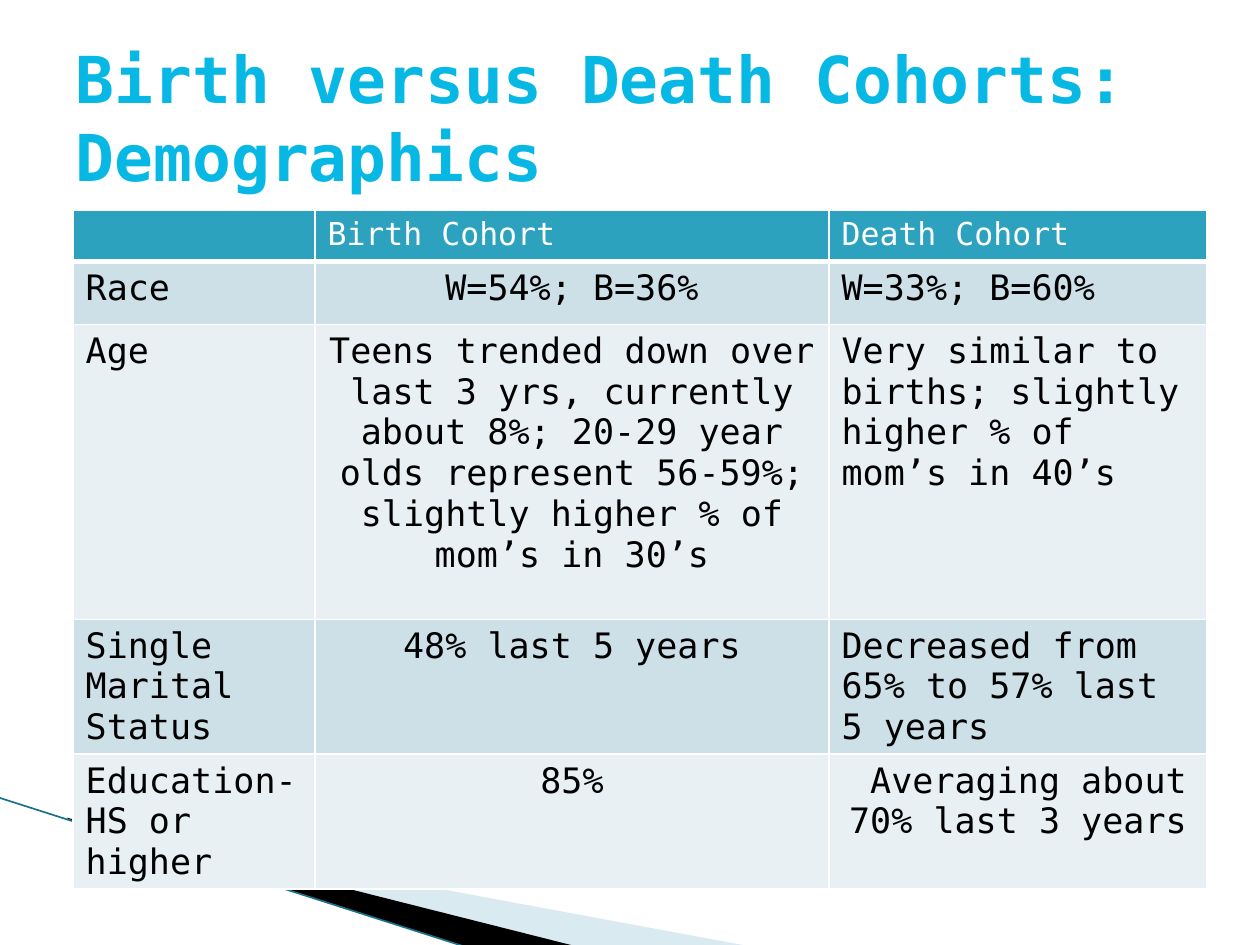
from typing import NamedTuple

import lxml.etree
import pptx
import pptx.util
from pptx.dml.color import RGBColor
from pptx.enum.shapes import MSO_CONNECTOR
from pptx.enum.text import MSO_ANCHOR, PP_ALIGN
from pptx.oxml import parse_xml
from pptx.oxml.ns import nsdecls, qn
from pptx.util import Inches

FONT = "DejaVu Sans Mono"
COLORS = {
    "title": "08B8E4",
    "header": "2DA2BF",
    "odd_row": "CDE0E8",
    "even_row": "E8F0F4",
    "white": "FFFFFF",
    "black": "000000",
    "pale_wedge": "A0CBDC",
    "edge": "1A7288",
}


class Wedge(NamedTuple):
    points: list[tuple[float, float]]
    color: str
    opacity: int


class Row(NamedTuple):
    height: float
    label: str
    birth: str
    death: str
    death_align: PP_ALIGN = PP_ALIGN.LEFT


WEDGES = [
    Wedge([(0.55, 6.51), (5.95, 7.51), (4.56, 7.51), (0.55, 6.5)], "pale_wedge", 40),
    Wedge([(0.53, 6.49), (4.57, 7.51), (3.72, 7.52), (0.54, 6.5)], "black", 100),
]
COLUMN_WIDTHS = [1.92, 4.08, 3]
ROWS = [
    Row(0.39, "", "Birth Cohort", "Death Cohort"),
    Row(0.5, "Race", "W=54%; B=36%", "W=33%; B=60%"),
    Row(2.34, "Age",
        "Teens trended down over last 3 yrs, currently about 8%; 20-29 year olds "
        "represent 56-59%; slightly higher % of mom’s in 30’s",
        "Very similar to births; slightly higher % of mom’s in 40’s"),
    Row(0.86, "Single Marital Status", "48% last 5 years",
        "Decreased from 65% to 57% last 5 years"),
    Row(0.86, "Education-HS or higher", "85%",
        " Averaging about 70% last 3 years", PP_ALIGN.CENTER),
]


def rgb(name: str) -> RGBColor:
    return RGBColor.from_string(COLORS[name])


def format_text(frame, size: float, color: str, bold: bool = False) -> None:
    for paragraph in frame.paragraphs:
        for run in paragraph.runs:
            run.font.name = FONT
            run.font.size = pptx.util.Pt(size)
            run.font.bold = bold
            run.font.color.rgb = rgb(color)


def draw_wedge(slide, wedge: Wedge) -> None:
    start, *rest = [(Inches(x), Inches(y)) for x, y in wedge.points]
    builder = slide.shapes.build_freeform(*start)
    builder.add_line_segments(rest, close=True)
    shape = builder.convert_to_shape()
    shape.shadow.inherit = False
    shape.line.fill.background()
    shape.fill.solid()
    shape.fill.fore_color.rgb = rgb(wedge.color)
    if wedge.opacity < 100:
        color = shape.fill._xPr.find(".//" + qn("a:srgbClr"))
        alpha = lxml.etree.SubElement(color, qn("a:alpha"))
        alpha.set("val", str(wedge.opacity * 1000))


def draw_edge(slide) -> None:
    edge = slide.shapes.add_connector(
        MSO_CONNECTOR.STRAIGHT, Inches(-0.01), Inches(6.33), Inches(3.71), Inches(7.52))
    edge.line.color.rgb = rgb("edge")
    edge.line.width = pptx.util.Pt(0.95)
    lxml.etree.SubElement(edge._element.spPr, qn("a:effectLst"))


def set_borders(cell, bottom: float) -> None:
    """Put white borders before the cell's fill, as the schema orders them."""
    properties = cell._tc.get_or_add_tcPr()
    for index, (side, points) in enumerate(
            [("lnL", 1), ("lnR", 1), ("lnT", 1), ("lnB", bottom)]):
        properties.insert(index, parse_xml(
            f'<a:{side} {nsdecls("a")} w="{int(points * 12700)}"><a:solidFill>'
            f'<a:srgbClr val="{COLORS["white"]}"/></a:solidFill></a:{side}>'))


def draw_table(slide) -> None:
    table = slide.shapes.add_table(
        len(ROWS), len(COLUMN_WIDTHS), Inches(0.58), Inches(1.67),
        Inches(sum(COLUMN_WIDTHS)), Inches(sum(row.height for row in ROWS))).table
    for column, width in zip(table.columns, COLUMN_WIDTHS):
        column.width = Inches(width)
    for index, row in enumerate(ROWS):
        table.rows[index].height = Inches(row.height)
        is_header = index == 0
        fill = "header" if is_header else "odd_row" if index % 2 else "even_row"
        birth_align = PP_ALIGN.LEFT if is_header else PP_ALIGN.CENTER
        contents = [(row.label, PP_ALIGN.LEFT), (row.birth, birth_align),
                    (row.death, row.death_align)]
        for cell, (text, align) in zip(table.rows[index].cells, contents):
            cell.fill.solid()
            cell.fill.fore_color.rgb = rgb(fill)
            set_borders(cell, bottom=3 if is_header else 1)
            if text:
                cell.text_frame.text = text
                cell.text_frame.paragraphs[0].alignment = align
                format_text(cell.text_frame, 18 if is_header else 20,
                            "white" if is_header else "black")


def draw_title(slide) -> None:
    title = slide.shapes.title
    title.left, title.top = Inches(0.5), Inches(0.3)
    title.width, title.height = Inches(9), Inches(1.25)
    frame = title.text_frame
    frame.text = "Birth versus Death Cohorts: Demographics"
    frame.word_wrap = True
    frame.vertical_anchor = MSO_ANCHOR.MIDDLE
    frame.paragraphs[0].alignment = PP_ALIGN.LEFT
    format_text(frame, 36.9, "title", bold=True)


def main() -> None:
    presentation = pptx.Presentation()
    presentation.slide_width, presentation.slide_height = Inches(10), Inches(7.5)
    slide = presentation.slides.add_slide(
        presentation.slide_layouts.get_by_name("Title Only"))
    for wedge in WEDGES:
        draw_wedge(slide, wedge)
    draw_edge(slide)
    draw_title(slide)
    draw_table(slide)
    presentation.save("out.pptx")


if __name__ == "__main__":
    main()
